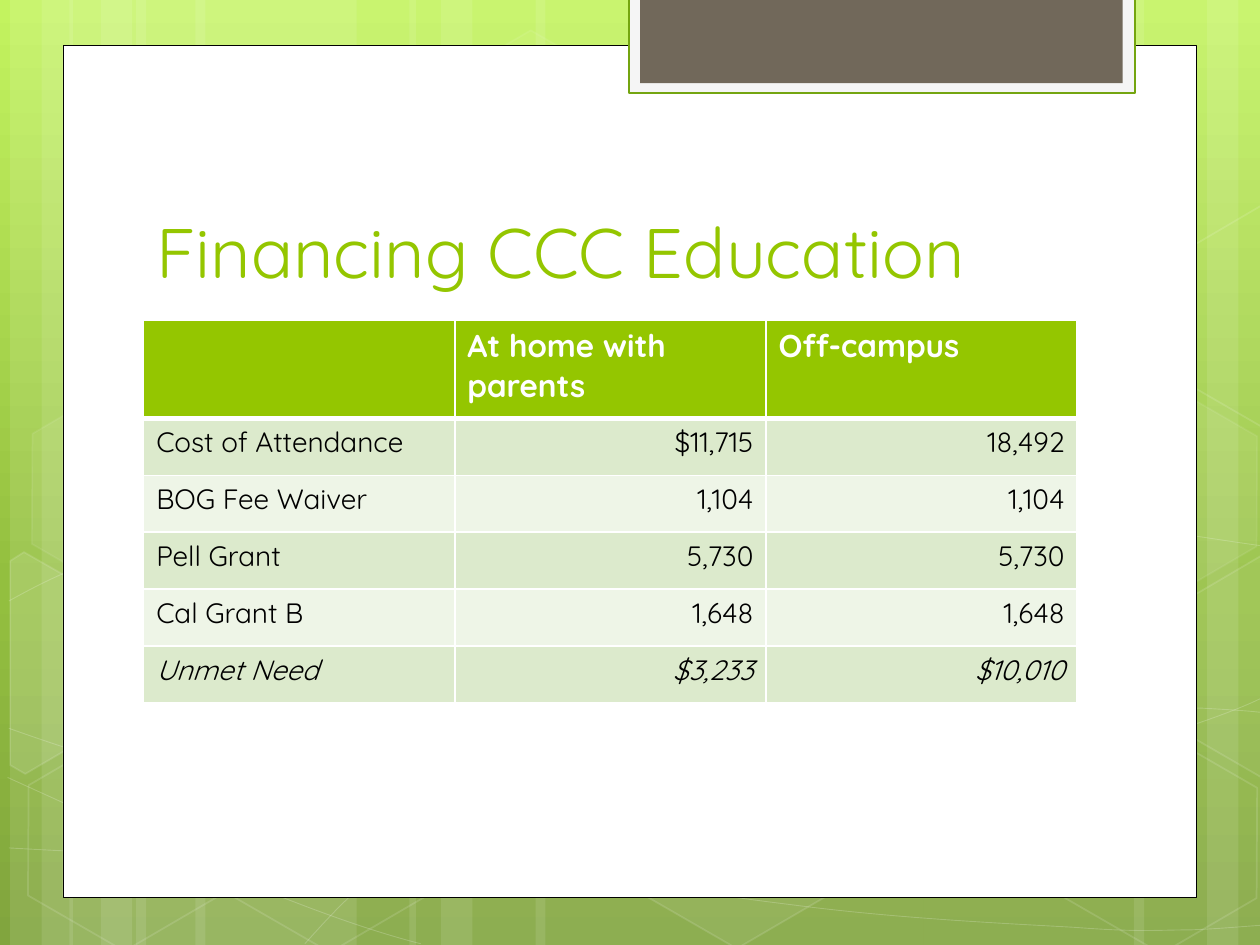
from copy import deepcopy
from dataclasses import dataclass
from math import cos, radians, sin
from typing import Optional

from lxml import etree
from pptx import Presentation
from pptx.dml.color import RGBColor
from pptx.enum.shapes import MSO_SHAPE
from pptx.enum.text import MSO_ANCHOR, MSO_AUTO_SIZE, PP_ALIGN
from pptx.oxml.ns import qn
from pptx.util import Inches, Pt

RECTANGLE, HEXAGON = MSO_SHAPE.RECTANGLE, MSO_SHAPE.HEXAGON
LEFT, RIGHT = PP_ALIGN.LEFT, PP_ALIGN.RIGHT
BOTTOM, NO_AUTOFIT = MSO_ANCHOR.BOTTOM, MSO_AUTO_SIZE.NONE
TITLE_ONLY = 5
TILT = 30
FONT = "Quicksand"
COLORS = {
    "white": "FFFFFF", "black": "000000", "green": "94C600",
    "tab": "F5F5F5", "tab_line": "74A510", "brown": "71685A",
    "band_dark": "DCEACC", "band_light": "EEF5E7",
    "sky": "C3F35F", "grass": "93BF3F", "moss": "81A53E",
}
Point = tuple[float, float]


@dataclass
class Look:
    """Fill and line of a shape; alpha values are percentages."""
    fill: Optional[str] = None
    fill_alpha: int = 100
    line: Optional[str] = None
    line_width: float = 1
    line_alpha: int = 100


@dataclass
class Block:
    left: float
    top: float
    width: float
    height: float
    look: Look


@dataclass
class CutHexagon:
    """A tilted hexagon cut off by the slide edge."""
    center: Point
    points: list[Point]
    fill_alpha: int


def rgb(name: str) -> RGBColor:
    return RGBColor.from_string(COLORS[name])


def set_alpha(parent, percent: int) -> None:
    if percent < 100:
        color = parent.find(".//" + qn("a:srgbClr"))
        etree.SubElement(color, qn("a:alpha"), val=str(percent * 1000))


def apply_look(shape, look: Look) -> None:
    shape.shadow.inherit = False
    properties = shape.element.spPr
    if look.fill:
        shape.fill.solid()
        shape.fill.fore_color.rgb = rgb(look.fill)
        set_alpha(properties.find(qn("a:solidFill")), look.fill_alpha)
    else:
        shape.fill.background()
    if look.line:
        shape.line.color.rgb = rgb(look.line)
        shape.line.width = Pt(look.line_width)
        set_alpha(properties.find(qn("a:ln")), look.line_alpha)
    else:
        shape.line.fill.background()


def add_block(slide, block: Block, kind=RECTANGLE):
    box = [Inches(v) for v in (block.left, block.top, block.width, block.height)]
    shape = slide.shapes.add_shape(kind, *box)
    apply_look(shape, block.look)
    return shape


def add_outline(slide, points: list[Point], look: Look, closed: bool):
    start, *others = [(Inches(x), Inches(y)) for x, y in points]
    builder = slide.shapes.build_freeform(*start)
    builder.add_line_segments(others, close=closed)
    shape = builder.convert_to_shape()
    apply_look(shape, look)
    return shape


def add_wave(slide, knots: list[Point]) -> None:
    """Draw cubic curves; a repeated knot starts a straight piece."""
    look = Look(line="white", line_width=0.5, line_alpha=20)
    shape = add_outline(slide, knots, look, closed=False)
    lines = shape.element.findall(".//" + qn("a:lnTo"))
    index = 0
    while index < len(lines):
        if index and index % 3 == 0 and knots[index] == knots[index - 1]:
            index += 1
            lines = lines[index:]
            knots = knots[index:]
            index = 0
            continue
        curve = etree.Element(qn("a:cubicBezTo"))
        lines[index].addprevious(curve)
        for line in lines[index:index + 3]:
            curve.append(line[0])
            line.getparent().remove(line)
        index += 3


def add_cut_hexagon(slide, hexagon: CutHexagon) -> None:
    center_x, center_y = hexagon.center
    cosine, sine = cos(radians(TILT)), sin(radians(TILT))
    upright = []
    for x, y in hexagon.points + hexagon.points[:1]:
        across, down = x - center_x, y - center_y
        upright.append((center_x + across * cosine + down * sine,
                        center_y - across * sine + down * cosine))
    shape = add_outline(slide, upright, glass(hexagon.fill_alpha, 12), closed=True)
    shape.rotation = TILT


def format_text(paragraph, text: str, alignment, font: dict, color: str) -> None:
    paragraph.alignment = alignment
    run = paragraph.add_run()
    run.text = text
    for name, value in font.items():
        setattr(run.font, name, value)
    run.font.color.rgb = rgb(color)


def add_borders(cell, widths: dict[str, float]) -> None:
    properties = cell.fill and cell._tc.get_or_add_tcPr()
    for index, (side, width) in enumerate(widths.items()):
        line = etree.Element(qn("a:ln" + side), w=str(Pt(width)))
        fill = etree.SubElement(line, qn("a:solidFill"))
        etree.SubElement(fill, qn("a:srgbClr"), val=COLORS["white"])
        properties.insert(index, line)


# Background: (left, width) of the stripes, knots of the waves
STRIPES = [
    (1.08, 1.75), (0.08, 0.5), (0.33, 0.83), (1.55, 1.75), (0.55, 0.5), (0.8, 0.83),
    (7.33, 1.75), (9.58, 0.5), (9, 0.83), (4.25, 3.08), (3.25, 0.5), (3.5, 0.83),
]
WAVES = [
    [(0.07, 6.73), (0.61, 6.76), (1.15, 6.79), (1.9, 6.78), (2.65, 6.77), (3.58, 6.75),
     (4.58, 6.65), (5.58, 6.55), (7, 6.36), (7.92, 6.17), (8.83, 5.98), (9.77, 5.68), (10.07, 5.51)],
    [(0.07, 4.77), (0.36, 4.61), (0.65, 4.46), (1.21, 4.31), (1.78, 4.16), (2.59, 3.94),
     (3.47, 3.87), (4.36, 3.8), (5.44, 3.79), (6.54, 3.87), (7.64, 3.95), (9.47, 4.26), (10.07, 4.34)],
    [(0.06, 6.17), (1.27, 6.72), (2.47, 7.27), (3.34, 7.49)],
    [(0.07, 5.78), (0.38, 5.89), (0.7, 6), (1.28, 6.16), (1.86, 6.31), (2.73, 6.56),
     (3.57, 6.73), (4.4, 6.9), (5.45, 7.08), (6.28, 7.18), (7.11, 7.29), (8, 7.33),
     (8.53, 7.36), (9.05, 7.4), (9.19, 7.38), (9.45, 7.38), (9.71, 7.37), (9.89, 7.35), (10.07, 7.34)],
    [(2.42, 7.49), (2.6, 7.29), (2.78, 7.09), (3.02, 6.91), (3.26, 6.73), (3.6, 6.53),
     (3.88, 6.39), (4.16, 6.25), (4.33, 6.19), (4.7, 6.09), (5.06, 5.99), (5.73, 5.85),
     (6.08, 5.78), (6.44, 5.71), (6.49, 5.71), (6.8, 5.69), (7.11, 5.66), (7.6, 5.63),
     (7.94, 5.62), (8.29, 5.61), (8.86, 5.62), (8.86, 5.62), (9.53, 5.62), (9.71, 5.63),
     (9.88, 5.64), (9.97, 5.65), (10.06, 5.66), (10.03, 5.65), (10.06, 5.66)],
]
# Left, top, fill alpha (0 for none), line alpha
HEXAGONS = [
    (3.34, 0.36, 4, 8), (4.97, 5.89, 6, 12), (0.11, 5.91, 0, 12), (0.14, 3.12, 7, 8),
    (1.74, 5.92, 0, 12), (7.53, 4.53, 10, 12), (8.34, 5.93, 0, 12), (8.34, 3.14, 7, 8),
]
CUT_HEXAGONS = [
    CutHexagon((0.36, 5.35), [(0.08, 4.45), (0.19, 4.38), (0.96, 4.82), (0.95, 5.7),
                              (0.2, 6.14), (0.08, 6.07)], 10),
    CutHexagon((9.85, 5.2), [(9.26, 4.85), (10.01, 4.41), (10.09, 4.46), (10.09, 6.13),
                             (10.02, 6.17), (9.26, 5.73)], 4),
    CutHexagon((9.85, 2.41), [(9.26, 2.07), (10.01, 1.63), (10.1, 1.68), (10.09, 3.35),
                              (10.02, 3.39), (9.26, 2.95)], 0),
]
PANELS = [
    Block(0.5, 0.36, 9, 6.76, Look("white", line="black", line_width=0.5)),
    Block(4.99, -0.02, 4.02, 0.76, Look("tab", line="tab_line", line_width=1.25)),
    Block(5.08, -0.02, 3.83, 0.68, Look("brown")),
]
ROWS = [
    ("", "At home with parents", "Off-campus"),
    ("Cost of Attendance", "$11,715", "18,492"),
    ("BOG Fee Waiver", "1,104", "1,104"),
    ("Pell Grant", "5,730", "5,730"),
    ("Cal Grant B", "1,648", "1,648"),
    ("Unmet Need", "$3,233", "$10,010"),
]
TABLE_HEIGHT, HEADER_HEIGHT = 3.04, 0.78


def glass(fill_alpha: int, line_alpha: int) -> Look:
    return Look("white" if fill_alpha else None, fill_alpha, "white", 1, line_alpha)


def draw_background(slide) -> None:
    fill = slide.background.fill
    fill.gradient()
    fill.gradient_angle = 270
    stop_list = slide.element.find(".//" + qn("a:gsLst"))
    stop_list.insert(1, deepcopy(stop_list[0]))
    stops = ((0, "sky"), (0.62, "grass"), (1, "moss"))
    for stop, (position, color) in zip(fill.gradient_stops, stops):
        stop.position = position
        stop.color.rgb = rgb(color)
    for left, width in STRIPES:
        add_block(slide, Block(left, 0, width, 7.5, Look("white", 10)))
    for knots in WAVES:
        add_wave(slide, knots)
    for left, top, fill_alpha, line_alpha in HEXAGONS:
        hexagon = add_block(slide, Block(left, top, 1.75, 1.52, glass(fill_alpha, line_alpha)), HEXAGON)
        hexagon.adjustments[0] = 0.285
        hexagon.rotation = TILT
    for hexagon in CUT_HEXAGONS:
        add_cut_hexagon(slide, hexagon)


def draw_title(slide) -> None:
    title = slide.shapes.title
    slide.shapes.element.append(title.element)  # in front of the panels
    for name, value in {"left": 1.14, "top": 1.12, "width": 7.68, "height": 1.25}.items():
        setattr(title, name, Inches(value))
    frame = title.text_frame
    for name, value in {"vertical_anchor": BOTTOM, "auto_size": NO_AUTOFIT, "word_wrap": True}.items():
        setattr(frame, name, value)
    format_text(frame.paragraphs[0], "Financing CCC Education", LEFT,
                {"name": FONT, "size": Pt(40)}, "green")


def draw_table(slide) -> None:
    box = [Inches(v) for v in (1.14, 2.54, 7.41, TABLE_HEIGHT)]
    table = slide.shapes.add_table(len(ROWS), 3, *box).table
    body_height = (TABLE_HEIGHT - HEADER_HEIGHT) / (len(ROWS) - 1)
    for row_index, texts in enumerate(ROWS):
        header = row_index == 0
        table.rows[row_index].height = Inches(HEADER_HEIGHT if header else body_height)
        band = "green" if header else "band_dark" if row_index % 2 else "band_light"
        font = {"name": FONT, "size": Pt(18 if header else 16), "bold": header,
                "italic": row_index == len(ROWS) - 1}
        for column_index, text in enumerate(texts):
            cell = table.cell(row_index, column_index)
            cell.fill.solid()
            cell.fill.fore_color.rgb = rgb(band)
            if header:
                add_borders(cell, {"L": 1, "R": 1, "T": 1, "B": 3})
            if text:
                alignment = LEFT if header or column_index == 0 else RIGHT
                format_text(cell.text_frame.paragraphs[0], text, alignment, font,
                            "white" if header else "black")


def main() -> None:
    presentation = Presentation()
    presentation.slide_width, presentation.slide_height = Inches(10), Inches(7.5)
    slide = presentation.slides.add_slide(presentation.slide_layouts[TITLE_ONLY])
    draw_background(slide)
    for panel in PANELS:
        add_block(slide, panel)
    draw_title(slide)
    draw_table(slide)
    presentation.save("out.pptx")


if __name__ == "__main__":
    main()
